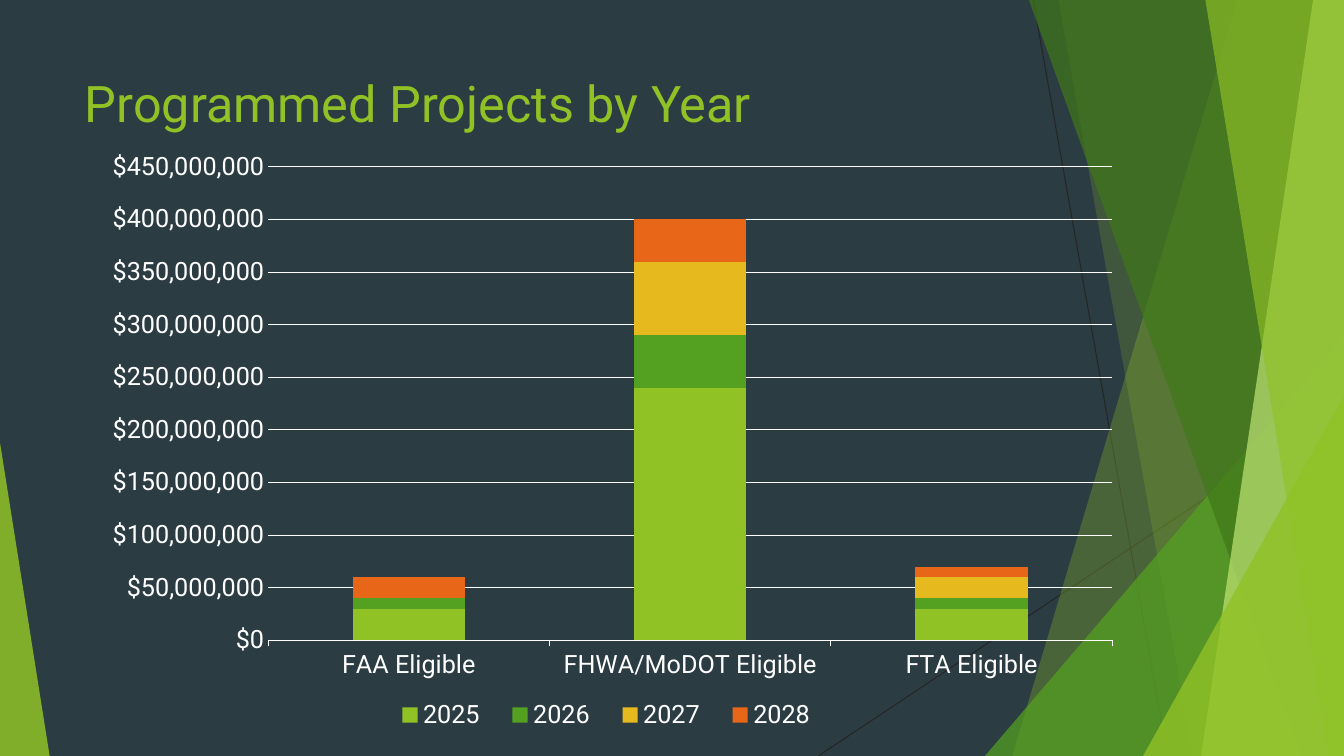
from dataclasses import dataclass

from lxml import etree
from pptx import Presentation
from pptx.chart.data import CategoryChartData
from pptx.dml.color import RGBColor
from pptx.enum.chart import XL_CHART_TYPE, XL_LEGEND_POSITION, XL_TICK_MARK
from pptx.enum.shapes import MSO_CONNECTOR, MSO_SHAPE
from pptx.enum.text import MSO_ANCHOR
from pptx.oxml import parse_xml
from pptx.oxml.ns import nsdecls, qn
from pptx.util import Pt

STACKED = XL_CHART_TYPE.COLUMN_STACKED
LEGEND_BOTTOM = XL_LEGEND_POSITION.BOTTOM
TICK_NONE, TICK_OUT = XL_TICK_MARK.NONE, XL_TICK_MARK.OUTSIDE
STRAIGHT = MSO_CONNECTOR.STRAIGHT
TRIANGLE = MSO_SHAPE.ISOSCELES_TRIANGLE
TOP = MSO_ANCHOR.TOP

SLATE = RGBColor(0x2C, 0x3C, 0x43)
CHARCOAL = RGBColor(0x26, 0x26, 0x26)
WHITE = RGBColor(0xFF, 0xFF, 0xFF)
LIME = RGBColor(0x90, 0xC2, 0x26)
GREEN = RGBColor(0x54, 0xA0, 0x21)
FOREST = RGBColor(0x3F, 0x78, 0x19)
PALE_LIME = RGBColor(0xC0, 0xE4, 0x74)
GOLD = RGBColor(0xE6, 0xB9, 0x1E)
ORANGE = RGBColor(0xE7, 0x66, 0x18)

FONT = "Roboto"
WIDTH, HEIGHT = 960, 540
CHART_WIDTH, CHART_HEIGHT = 744, 427.5
MILLION = 1_000_000


@dataclass(frozen=True)
class Band:
    """Full-height facet that reaches the right edge of the slide."""
    top_x: float
    bottom_x: float
    color: RGBColor
    opacity: int


@dataclass(frozen=True)
class Corner:
    """Right triangle that stands on the bottom edge of the slide."""
    left: float
    top: float
    width: float
    apex: float
    color: RGBColor
    opacity: int


@dataclass(frozen=True)
class Year:
    name: str
    millions: tuple[int, ...]
    color: RGBColor


RAYS = [((738, 0), (834, HEIGHT)), ((WIDTH, 290), (584.5, HEIGHT))]
FACETS = [
    Band(884, 723, LIME, 30),
    Band(756, 852, LIME, 20),
    Corner(703.5, 240, 256.5, 1, GREEN, 72),
    Band(735, 929.5, FOREST, 70),
    Band(938, 858, PALE_LIME, 70),
    Band(861, 949, LIME, 65),
    Corner(816.5, 283, 143.5, 1, LIME, 80),
    Corner(0, 316, 35.5, 0, LIME, 85),
]
CATEGORIES = ["FAA Eligible", "FHWA/MoDOT Eligible", "FTA Eligible"]
YEARS = [
    Year("2025", (30, 240, 30), LIME),
    Year("2026", (10, 50, 10), GREEN),
    Year("2027", (0, 70, 20), GOLD),
    Year("2028", (20, 40, 10), ORANGE),
]


def add_ray(slide, start: tuple[float, float], end: tuple[float, float]) -> None:
    ray = slide.shapes.add_connector(STRAIGHT, *map(Pt, start + end))
    ray.line.color.rgb = CHARCOAL
    ray.line.width = Pt(0.75)
    etree.SubElement(ray._element.spPr, qn("a:effectLst"))


def add_facet(slide, facet: Band | Corner) -> None:
    if isinstance(facet, Band):
        builder = slide.shapes.build_freeform(Pt(facet.top_x), 0)
        corners = [(WIDTH, 0), (WIDTH, HEIGHT), (facet.bottom_x, HEIGHT)]
        builder.add_line_segments([(Pt(x), Pt(y)) for x, y in corners])
        shape = builder.convert_to_shape()
    else:
        shape = slide.shapes.add_shape(
            TRIANGLE, Pt(facet.left), Pt(facet.top),
            Pt(facet.width), Pt(HEIGHT - facet.top))
        shape.adjustments[0] = facet.apex
    shape.shadow.inherit = False
    shape.line.fill.background()
    shape.fill.solid()
    shape.fill.fore_color.rgb = facet.color
    color = shape._element.spPr.find(qn("a:solidFill"))[0]
    etree.SubElement(color, qn("a:alpha"), val=str(facet.opacity * 1000))


def set_font(font, size: float, color: RGBColor) -> None:
    font.name = FONT
    font.size = Pt(size)
    font.color.rgb = color


def add_text(slide, text: str, *, left: float, top: float, width: float,
             height: float, size: float, color: RGBColor) -> None:
    box = slide.shapes.add_textbox(Pt(left), Pt(top), Pt(width), Pt(height))
    frame = box.text_frame
    frame.word_wrap = True
    frame.vertical_anchor = TOP
    span = frame.paragraphs[0].add_run()
    span.text = text
    set_font(span.font, size, color)


def set_line(line) -> None:
    line.color.rgb = WHITE
    line.width = Pt(0.75)


def place_part(part, index: int, left: float, top: float, width: float,
               height: float, target: str = "") -> None:
    """Fix a chart part, in points from the chart's corner.

    The layout becomes the child of the part at the given index.
    """
    for old in part.findall(qn("c:layout")):
        part.remove(old)
    shares = (left / CHART_WIDTH, top / CHART_HEIGHT,
              width / CHART_WIDTH, height / CHART_HEIGHT)
    sizes = "".join(f'<c:{key} val="{share:.4f}"/>'
                    for key, share in zip("xywh", shares))
    part.insert(index, parse_xml(
        f'<c:layout {nsdecls("c")}><c:manualLayout>{target}'
        '<c:xMode val="edge"/><c:yMode val="edge"/>'
        f'{sizes}</c:manualLayout></c:layout>'))


def add_year_chart(slide) -> None:
    data = CategoryChartData(number_format='"$"#,##0')
    data.categories = CATEGORIES
    for year in YEARS:
        data.add_series(year.name, [value * MILLION for value in year.millions])
    chart = slide.shapes.add_chart(
        STACKED, Pt(65.5), Pt(100), Pt(CHART_WIDTH), Pt(CHART_HEIGHT), data).chart
    set_font(chart.font, 10, WHITE)
    chart.has_title = False

    plot = chart.plots[0]
    plot.vary_by_categories = False
    plot.gap_width, plot.overlap = 150, 100
    for series, year in zip(plot.series, YEARS):
        series.format.fill.solid()
        series.format.fill.fore_color.rgb = year.color

    categories, dollars = chart.category_axis, chart.value_axis
    categories.major_tick_mark = TICK_OUT
    set_line(categories.format.line)
    dollars.major_tick_mark = TICK_NONE
    dollars.minimum_scale, dollars.maximum_scale = 0, 450 * MILLION
    dollars.major_unit = 50 * MILLION
    dollars.tick_labels.number_format = '"$"#,##0'
    dollars.tick_labels.number_format_is_linked = False
    dollars.format.line.fill.background()
    set_line(dollars.major_gridlines.format.line)

    chart.has_legend = True
    chart.legend.position = LEGEND_BOTTOM
    chart.legend.include_in_layout = False
    for labels in (categories.tick_labels, dollars.tick_labels, chart.legend):
        set_font(labels.font, 18, WHITE)

    parts = chart._chartSpace.chart
    place_part(parts.plotArea, 0, 126, 19.25, 603, 338.25,
               '<c:layoutTarget val="inner"/>')
    place_part(parts.find(qn("c:legend")), 1, 204.5, 397, 326, 27.5)


def main() -> None:
    deck = Presentation()
    deck.slide_width, deck.slide_height = Pt(WIDTH), Pt(HEIGHT)
    page = deck.slides.add_slide(deck.slide_layouts[6])
    page.background.fill.solid()
    page.background.fill.fore_color.rgb = SLATE
    for start, end in RAYS:
        add_ray(page, start, end)
    for facet in FACETS:
        add_facet(page, facet)
    add_text(page, "Programmed Projects by Year", left=53.5, top=48,
             width=677, height=104, size=36, color=LIME)
    add_year_chart(page)
    deck.save("out.pptx")


if __name__ == "__main__":
    main()
